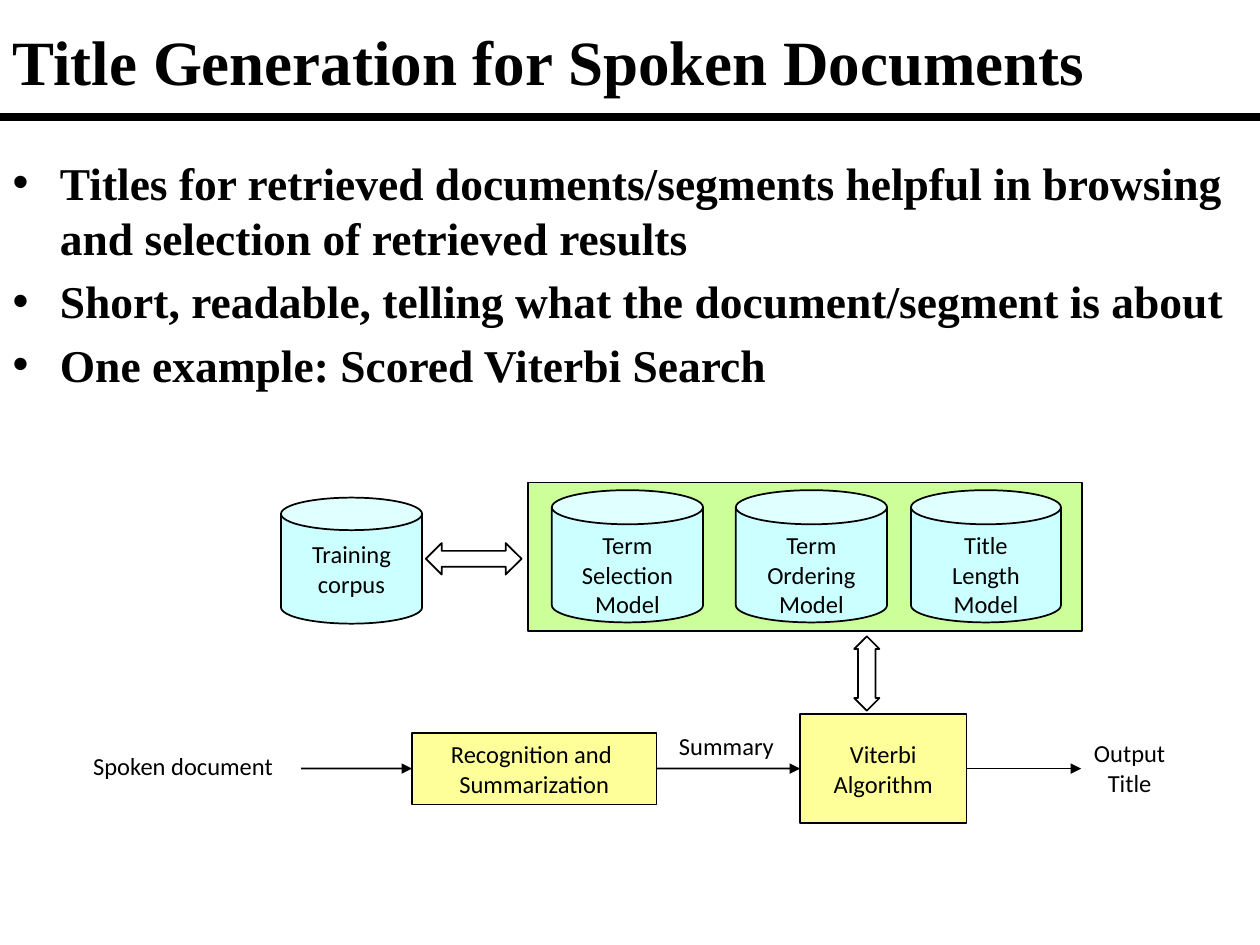
"""Build a slide on title generation for spoken documents."""
from lxml import etree
from pptx import Presentation
from pptx.dml.color import RGBColor
from pptx.enum.shapes import MSO_CONNECTOR, MSO_SHAPE
from pptx.enum.text import MSO_ANCHOR, MSO_AUTO_SIZE, PP_ALIGN
from pptx.oxml.ns import qn
from pptx.util import Inches, Pt

CAN, RECT = MSO_SHAPE.CAN, MSO_SHAPE.RECTANGLE
H_ARROW, V_ARROW = MSO_SHAPE.LEFT_RIGHT_ARROW, MSO_SHAPE.UP_DOWN_ARROW
STRAIGHT = MSO_CONNECTOR.STRAIGHT
LEFT, CENTER = PP_ALIGN.LEFT, PP_ALIGN.CENTER
TOP, MIDDLE = MSO_ANCHOR.TOP, MSO_ANCHOR.MIDDLE
NO_FIT = MSO_AUTO_SIZE.NONE

COLORS = {"black": "000000", "store": "CCFFFF", "models": "CCFF99", "step": "FFFF99"}
HEAD_FONT, LABEL_FONT = "Times New Roman", "Calibri"

TITLE = "Title Generation for Spoken Documents"
BULLETS = [
    "Titles for retrieved documents/segments helpful in browsing and selection of retrieved results",
    "Short, readable, telling what the document/segment is about",
    "One example: Scored Viterbi Search",
]
CORPUS = ["Training", "corpus"]
MODELS = [
    (4.38, 1.2, ["Term", "Selection", "Model"]),
    (5.84, 1.2, ["Term", "Ordering", "Model"]),
    (7.23, 1.19, ["Title", "Length", "Model"]),
]
STEPS = [
    (3.27, 1.94, 0.57, ["Recognition and ", "Summarization"]),
    (6.35, 1.32, 0.87, ["Viterbi", "Algorithm"]),
]
LABELS = [
    (0.64, 5.91, 1.78, 0.34, LEFT, ["Spoken document"]),
    (5.29, 5.75, 1.2, 0.34, LEFT, ["Summary"]),
    (8.57, 5.81, 0.79, 0.57, CENTER, ["Output", "Title"]),
]
DOUBLE_ARROWS = [
    (H_ARROW, (3.38, 4.31, 0.76, 0.25), (0.5, 0.505)),
    (V_ARROW, (6.78, 5.05, 0.2, 0.59), (0.5, 0.696)),
]
FLOW_Y = 6.1
MODEL_TOP, MODEL_H = 3.89, 1.05


def rgb(name):
    return RGBColor.from_string(COLORS[name])


def write(tf, lines, font, size, bold, align, anchor):
    tf.word_wrap = True
    tf.auto_size = NO_FIT
    tf.vertical_anchor = anchor
    for i, line in enumerate(lines):
        p = tf.paragraphs[0] if i == 0 else tf.add_paragraph()
        p.alignment = align
        r = p.add_run()
        r.text = line
        r.font.name, r.font.size, r.font.bold = font, Pt(size), bold
        r.font.color.rgb = rgb("black")


def label(sp, lines, align=CENTER, anchor=MIDDLE, wrap=False):
    write(sp.text_frame, lines, LABEL_FONT, 14, False, align, anchor)
    sp.text_frame.word_wrap = wrap


def place(sp, left, top, width, height):
    sp.left, sp.top = Inches(left), Inches(top)
    sp.width, sp.height = Inches(width), Inches(height)


def add_shape(s, kind, box, fill=None, adjustments=()):
    sp = s.shapes.add_shape(kind, *map(Inches, box))
    sp.shadow.inherit = False
    if fill:
        sp.fill.solid()
        sp.fill.fore_color.rgb = rgb(fill)
    else:
        sp.fill.background()
    sp.line.color.rgb = rgb("black")
    sp.line.width = Pt(1)
    for i, value in enumerate(adjustments):
        sp.adjustments[i] = value
    return sp


def add_can(s, box, lines, anchor):
    sp = add_shape(s, CAN, box, "store", (0.258,))
    label(sp, lines, anchor=anchor)


def add_line(s, x1, x2, y, width=1, arrow=True):
    c = s.shapes.add_connector(STRAIGHT, Inches(x1), Inches(y), Inches(x2), Inches(y))
    c.line.color.rgb = rgb("black")
    c.line.width = Pt(width)
    if arrow:
        etree.SubElement(c.line._get_or_add_ln(), qn("a:tailEnd"), type="triangle")
    etree.SubElement(c._element.spPr, qn("a:effectLst"))
    return c


def main():
    prs = Presentation()
    prs.slide_width, prs.slide_height = Inches(10), Inches(7.5)
    s = prs.slides.add_slide(prs.slide_layouts[1])

    title, body = s.shapes.title, s.placeholders[1]
    place(title, 0, 0.08, 9.99, 0.79)
    write(title.text_frame, [TITLE], HEAD_FONT, 36, True, LEFT, MIDDLE)
    place(body, 0, 1.18, 9.99, 2.46)
    write(body.text_frame, BULLETS, HEAD_FONT, 26, True, LEFT, TOP)
    add_line(s, 0, 10, 0.93, 4.5, arrow=False)

    add_can(s, (2.23, 3.95, 1.12, 1), CORPUS, MIDDLE)
    add_shape(s, RECT, (4.19, 3.83, 4.4, 1.18), "models")
    for left, width, lines in MODELS:
        add_can(s, (left, MODEL_TOP, width, MODEL_H), lines, TOP)

    steps = []
    for left, width, height, lines in STEPS:
        sp = add_shape(s, RECT, (left, FLOW_Y - height / 2, width, height), "step")
        label(sp, lines, wrap=True)
        steps.append(sp)
    for left, top, width, height, align, lines in LABELS:
        sp = s.shapes.add_textbox(*map(Inches, (left, top, width, height)))
        label(sp, lines, align, TOP)
    for kind, box, adjustments in DOUBLE_ARROWS:
        add_shape(s, kind, box, adjustments=adjustments)

    recognition, viterbi = steps
    add_line(s, 2.39, 3.27, FLOW_Y).end_connect(recognition, 1)
    summary = add_line(s, 5.21, 6.35, FLOW_Y)
    summary.begin_connect(recognition, 3)
    summary.end_connect(viterbi, 1)
    add_line(s, 7.67, 8.58, FLOW_Y).begin_connect(viterbi, 3)

    prs.save("out.pptx")


if __name__ == "__main__":
    main()
